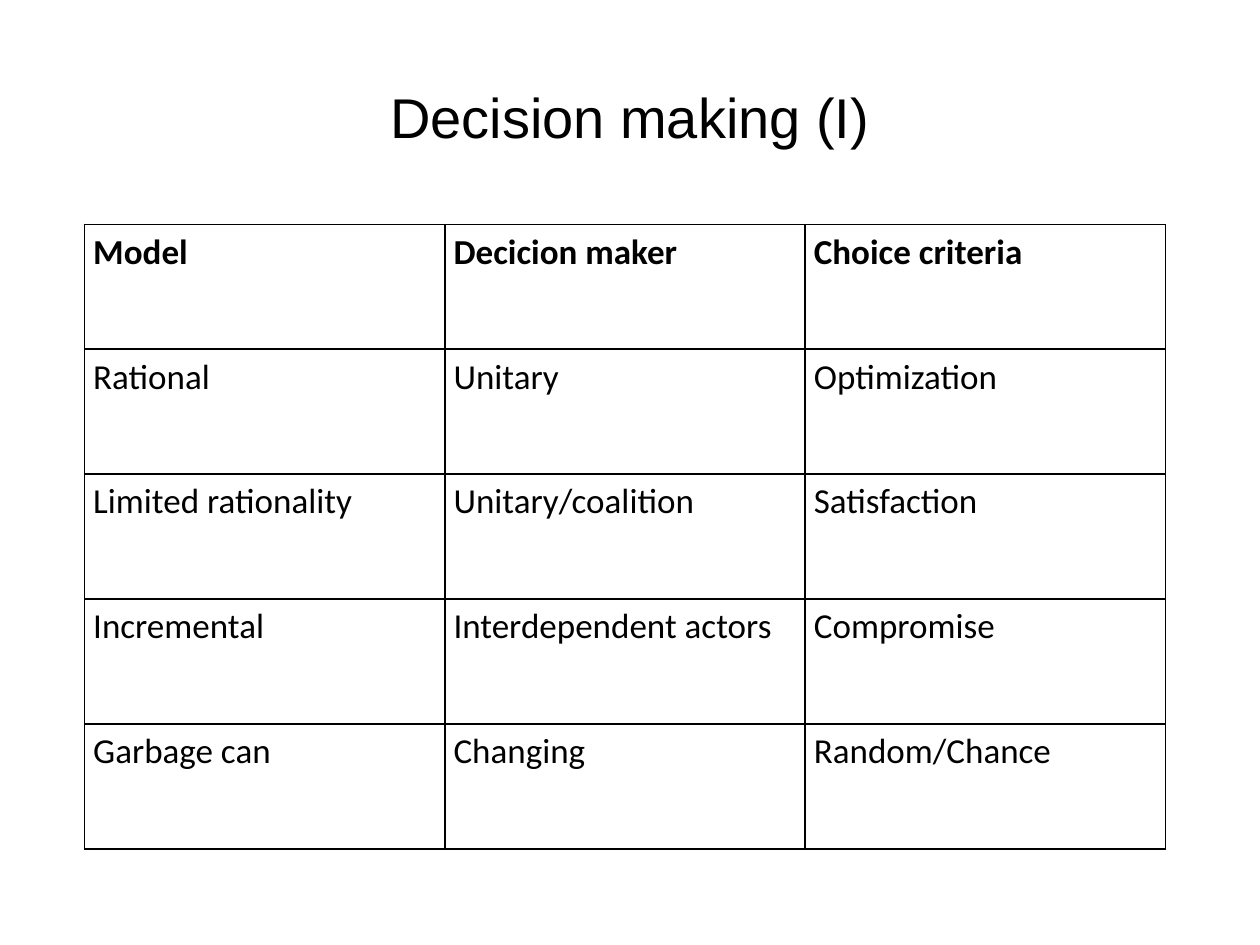
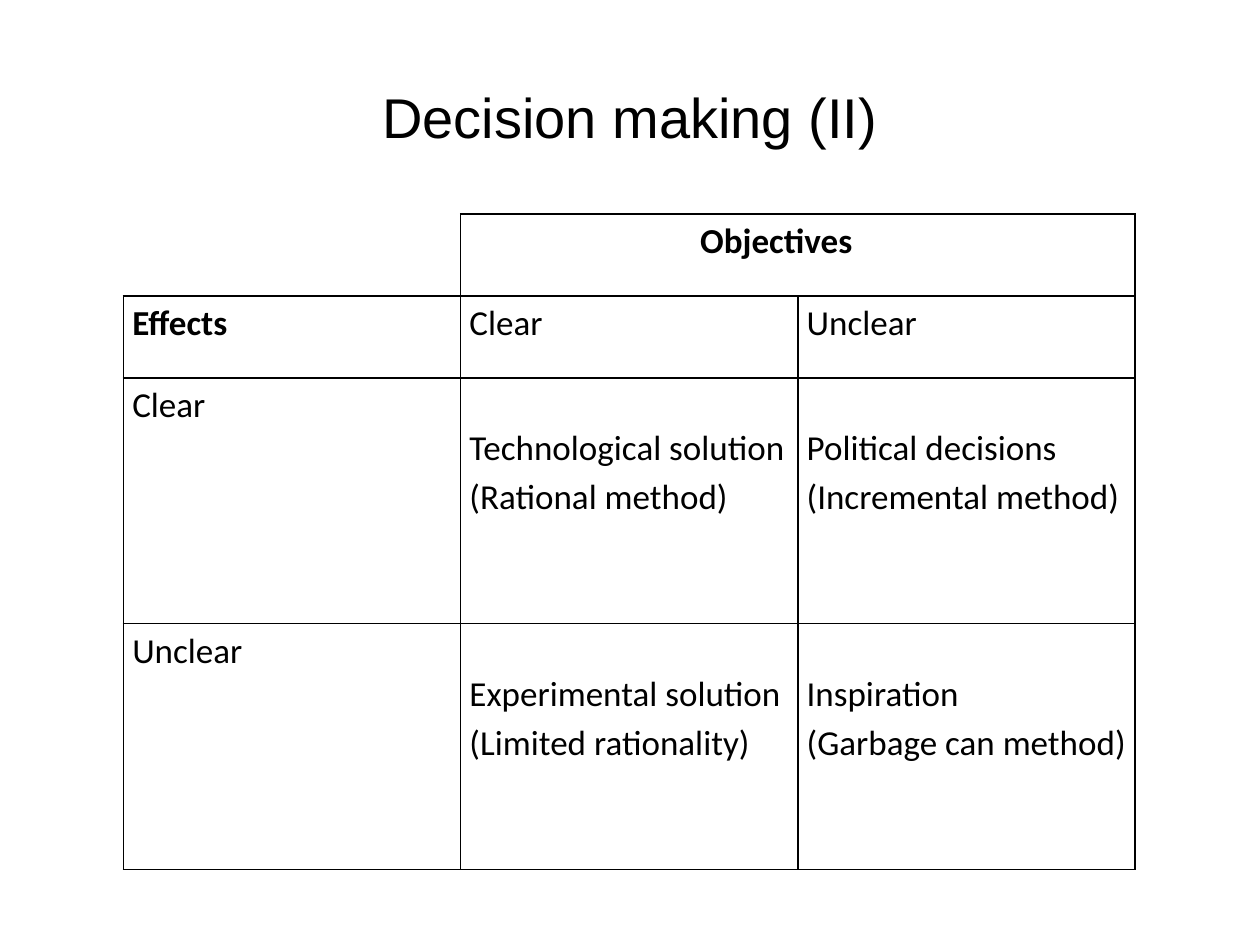
from lxml.etree import SubElement
from pptx import Presentation
from pptx.dml.color import RGBColor
from pptx.enum.text import MSO_ANCHOR as Anchor, PP_ALIGN as Align
from pptx.oxml.ns import qn
from pptx.util import Inches, Pt

BLACK = RGBColor(0x00, 0x00, 0x00)
TITLE_FONT = {"name": "Arial", "size": Pt(32), "bold": False}
CELL_FONT = {"name": "Calibri", "size": Pt(20)}
CELL_MARGINS = {"margin_left": Inches(0.07), "margin_right": Inches(0.07),
                "margin_top": 0, "margin_bottom": 0}
SOLUTION_DROP = Inches(0.34)
OBJECTIVES_INDENT = Inches(1.9)

# Row shares divide the table height; a tuple in a cell is a list of paragraphs.
SLIDES = [
    {
        "title": "Decision making (I)",
        "frame": (0.67, 1.78, 8.58, 4.96),
        "row_shares": [1, 1, 1, 1, 1],
        "bold": {"Model", "Decicion maker", "Choice criteria"},
        "rows": [
            ["Model", "Decicion maker", "Choice criteria"],
            ["Rational", "Unitary", "Optimization"],
            ["Limited rationality", "Unitary/coalition", "Satisfaction"],
            ["Incremental", "Interdependent actors", "Compromise"],
            ["Garbage can", "Changing", "Random/Chance"],
        ],
    },
    {
        "title": "Decision making (II)",
        "frame": (0.98, 1.7, 8.03, 5.2),
        "row_shares": [1, 1, 3, 3],
        "bold": {"Objectives", "Effects"},
        "rows": [
            [None, "Objectives", None],
            ["Effects", "Clear", "Unclear"],
            ["Clear", ("Technological solution", "(Rational method)"),
             ("Political decisions", "(Incremental method)")],
            ["Unclear", ("Experimental solution", "(Limited rationality)"),
             ("Inspiration", "(Garbage can method)")],
        ],
    },
]


def apply(target, values):
    for name, value in values.items():
        setattr(target, name, value)


def style_font(font, values):
    apply(font, values)
    font.color.rgb = BLACK


def add_title(slide, title):
    frame = slide.shapes.add_textbox(
        *map(Inches, (0.5, 0.3, 9, 1.25))).text_frame
    apply(frame, {"word_wrap": True, "vertical_anchor": Anchor.MIDDLE})
    heading = frame.paragraphs[0]
    heading.text, heading.alignment = title, Align.CENTER
    style_font(heading.font, TITLE_FONT)


def set_borders(cell, hidden=""):
    """Rule the four sides in black, except the hidden ones (letters of LRTB)."""
    properties = cell._tc.get_or_add_tcPr()
    for side in "LRTB":
        line = SubElement(properties, qn(f"a:ln{side}"), w=str(Pt(1)))
        if side in hidden:
            SubElement(line, qn("a:noFill"))
        else:
            fill = SubElement(line, qn("a:solidFill"))
            SubElement(fill, qn("a:srgbClr"), val=str(BLACK))


def fill_cell(cell, content, bold_texts):
    apply(cell, CELL_MARGINS)
    if isinstance(content, tuple):
        cell.margin_top = SOLUTION_DROP
    lines = content if isinstance(content, tuple) else (content or "",)
    cell.text = "\n".join(lines)
    for paragraph in cell.text_frame.paragraphs:
        paragraph.line_spacing = 1.15
        style_font(paragraph.font, CELL_FONT | {"bold": content in bold_texts})


def add_grid(slide, content):
    rows, shares = content["rows"], content["row_shares"]
    left, top, width, height = map(Inches, content["frame"])
    table = slide.shapes.add_table(
        len(rows), len(rows[0]), left, top, width, height).table
    apply(table, {"first_row": False, "horz_banding": False})
    for row, share in zip(table.rows, shares):
        row.height = int(height * share / sum(shares))
    for r, texts in enumerate(rows):
        for c, text in enumerate(texts):
            cell = table.cell(r, c)
            fill_cell(cell, text, content["bold"])
            empty_corner = r == c == 0 and text is None
            set_borders(cell, "LT" if empty_corner else "")
            cell.fill.background()
    return table


def main():
    deck = Presentation()
    deck.slide_width, deck.slide_height = Inches(10), Inches(7.5)
    for content in SLIDES:
        slide = deck.slides.add_slide(deck.slide_layouts[6])
        add_title(slide, content["title"])
        table = add_grid(slide, content)
        if "Objectives" in content["rows"][0]:
            objectives = table.cell(0, 1)
            objectives.merge(table.cell(0, 2))
            objectives.margin_left = OBJECTIVES_INDENT
    deck.save("out.pptx")


if __name__ == "__main__":
    main()
